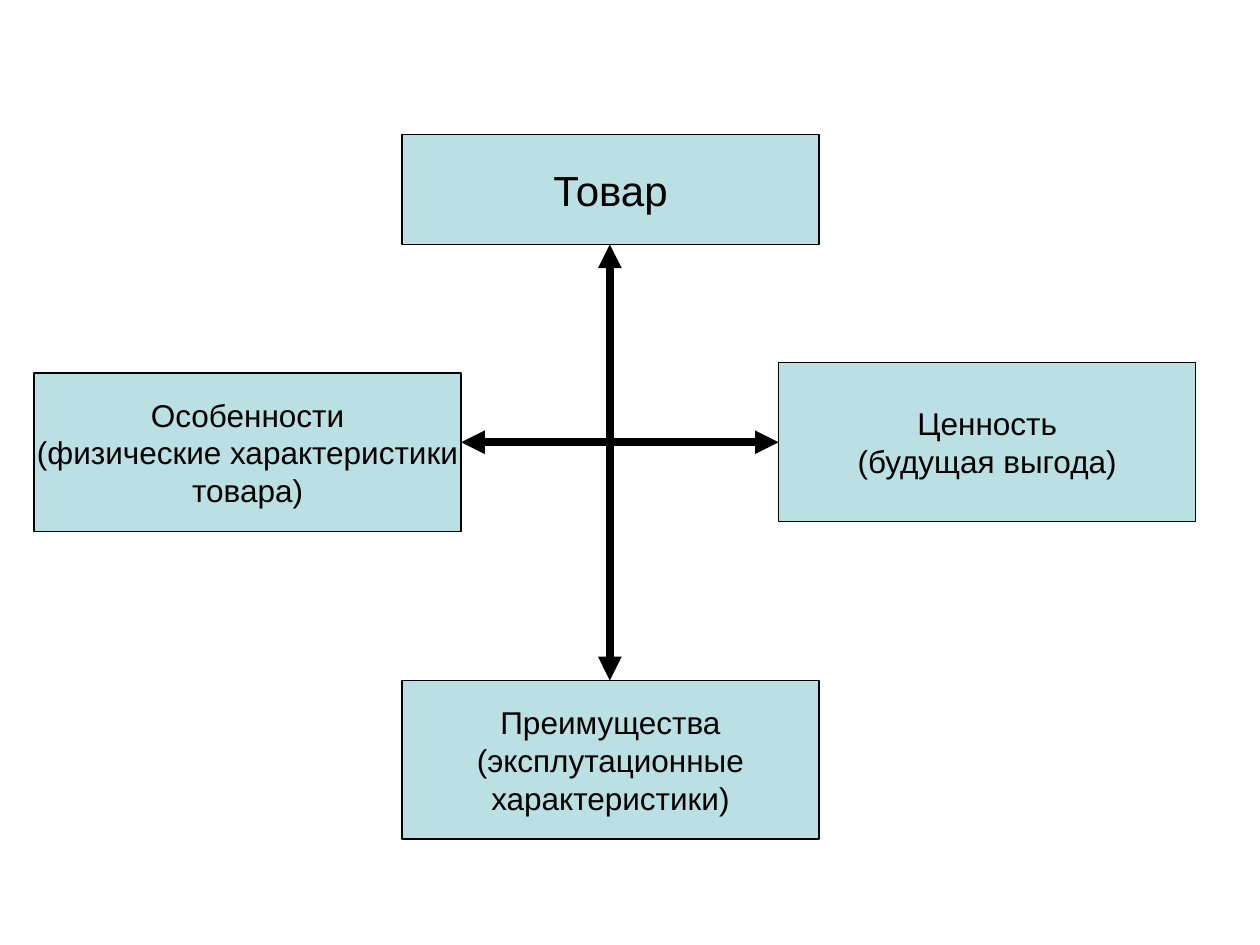
from lxml import etree
from pptx import Presentation
from pptx.dml.color import RGBColor
from pptx.enum.shapes import MSO_CONNECTOR, MSO_SHAPE
from pptx.enum.text import MSO_ANCHOR, PP_ALIGN
from pptx.oxml.ns import qn
from pptx.util import Inches, Pt

RECT = MSO_SHAPE.RECTANGLE
LINE = MSO_CONNECTOR.STRAIGHT
MIDDLE = MSO_ANCHOR.MIDDLE
CENTER = PP_ALIGN.CENTER
COLORS = {"fill": "BBE0E3", "ink": "000000"}


def color(name):
    return RGBColor.from_string(COLORS[name])


def write(frame, text, size=18, font="Arial", ink="ink", align=CENTER):
    frame.word_wrap = False
    frame.vertical_anchor = MIDDLE
    frame.text = text
    for para in frame.paragraphs:
        para.alignment = align
        para.font.size = Pt(size)
        para.font.name = font
        para.font.color.rgb = color(ink)


class Chart:
    """Draws boxes and arrows on a slide in one style."""

    def __init__(self, slide):
        self.slide = slide
        self.edge = 0.75
        self.stroke = 4.5

    def box(self, left, top, width, height, text, **style):
        shape = self.slide.shapes.add_shape(
            RECT, Inches(left), Inches(top), Inches(width), Inches(height))
        shape.shadow.inherit = False
        shape.fill.solid()
        shape.fill.fore_color.rgb = color("fill")
        shape.line.color.rgb = color("ink")
        shape.line.width = Pt(self.edge)
        write(shape.text_frame, text, **style)
        return shape

    def arrow(self, start, end):
        link = self.slide.shapes.add_connector(
            LINE, *(Inches(n) for n in (*start, *end)))
        link.line.color.rgb = color("ink")
        link.line.width = Pt(self.stroke)
        for tag in ("a:headEnd", "a:tailEnd"):
            etree.SubElement(link.line._get_or_add_ln(), qn(tag), type="triangle")
        etree.SubElement(link._element.spPr, qn("a:effectLst"))
        return link


def main():
    deck = Presentation()
    deck.slide_width, deck.slide_height = Inches(10), Inches(7.5)
    chart = Chart(deck.slides.add_slide(deck.slide_layouts[6]))
    wide, tall = 3.31, 1.26
    chart.box(3.19, 1.07, wide, 0.87, "Товар", size=24)
    chart.box(0.27, 2.96, 3.39, tall,
              "Особенности\n(физические характеристики\nтовара)")
    chart.box(6.18, 2.88, wide, tall, "Ценность\n(будущая выгода)")
    chart.box(3.19, 5.4, wide, tall,
              "Преимущества\n(эксплутационные\nхарактеристики)")
    chart.arrow((3.66, 3.51), (6.18, 3.51))
    chart.arrow((4.84, 1.94), (4.84, 5.4))
    deck.save("out.pptx")


if __name__ == "__main__":
    main()
